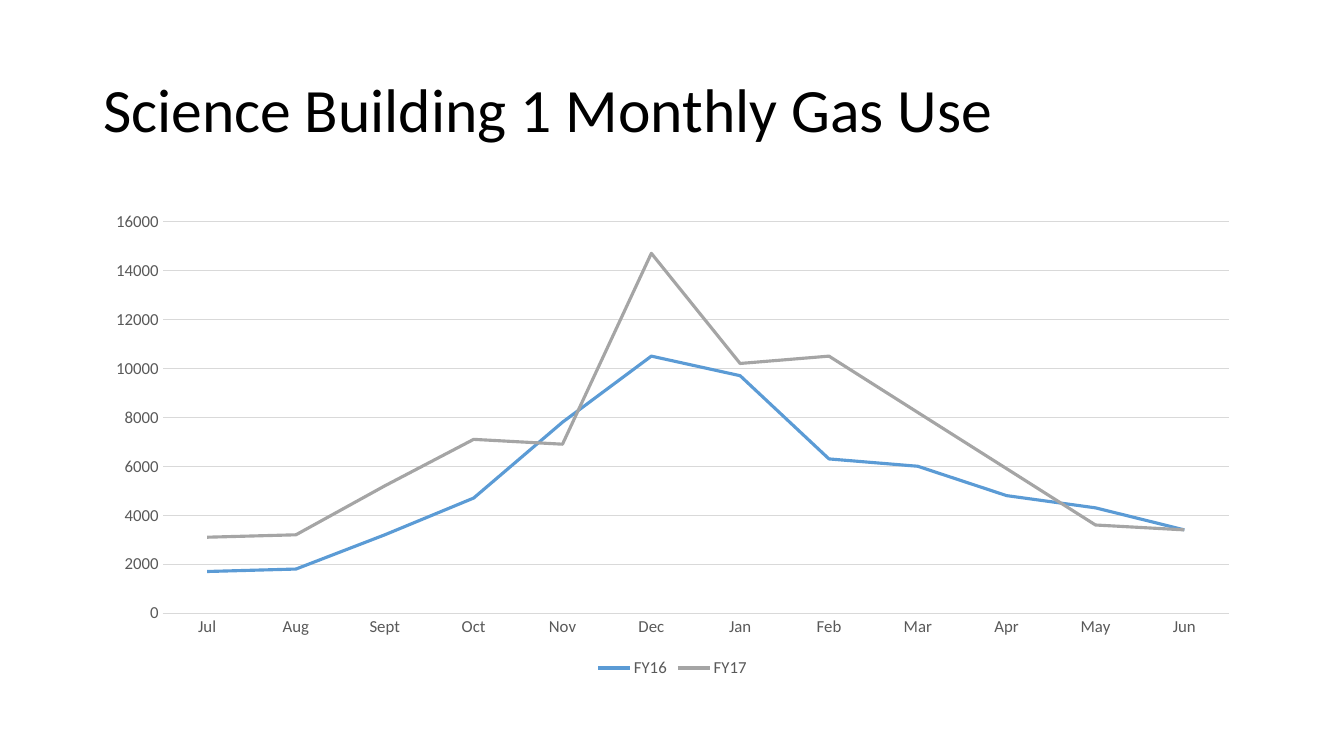
"""Build a slide with a line chart of monthly gas use over two fiscal years."""
import pptx
import pptx.util
import pptx.chart.data
import pptx.dml.color
import pptx.enum.chart
import pptx.enum.text

TITLE = "Science Building 1 Monthly Gas Use"
MONTHS = ["Jul", "Aug", "Sept", "Oct", "Nov", "Dec",
          "Jan", "Feb", "Mar", "Apr", "May", "Jun"]
USAGE = {
    "FY16": [1700, 1800, 3200, 4700, 7800, 10500,
             9700, 6300, 6000, 4800, 4300, 3400],
    "FY17": [3100, 3200, 5200, 7100, 6900, 14700,
             10200, 10500, 8200, 5900, 3600, 3400],
}
COLORS = {"FY16": "5B9BD5", "FY17": "A5A5A5", "title": "000000",
          "label": "595959", "grid": "D9D9D9"}
FONT = "Calibri"
SLIDE = (1344, 756)
TITLE_BOX = (93, 40, 1159, 146)
CHART_BOX = (93, 202, 1159, 480)
SCALE = 914400 / 100.8


def emu(px):
    return pptx.util.Emu(round(px * SCALE))


def color(name):
    return pptx.dml.color.RGBColor.from_string(COLORS[name])


def set_font(font, size, name):
    font.name = FONT
    font.size = pptx.util.Pt(size)
    font.color.rgb = color(name)


def set_line(line, width, name):
    line.color.rgb = color(name)
    line.width = pptx.util.Pt(width)


def add_title(slide):
    title = slide.shapes.title
    title.left, title.top, title.width, title.height = map(emu, TITLE_BOX)
    frame = title.text_frame
    frame.text = TITLE
    frame.word_wrap = True
    frame.vertical_anchor = pptx.enum.text.MSO_ANCHOR.MIDDLE
    para = frame.paragraphs[0]
    para.alignment = pptx.enum.text.PP_ALIGN.LEFT
    para.line_spacing = 0.9
    set_font(para.runs[0].font, 44, "title")


def add_usage(slide):
    data = pptx.chart.data.CategoryChartData()
    data.categories = MONTHS
    for year, values in USAGE.items():
        data.add_series(year, values)
    chart = slide.shapes.add_chart(
        pptx.enum.chart.XL_CHART_TYPE.LINE, *map(emu, CHART_BOX), data).chart
    set_font(chart.font, 12, "label")
    chart.has_title = False
    chart.has_legend = True
    chart.legend.position = pptx.enum.chart.XL_LEGEND_POSITION.BOTTOM
    chart.legend.include_in_layout = False
    set_font(chart.legend.font, 12, "label")

    months, amounts = chart.category_axis, chart.value_axis
    for axis in (months, amounts):
        axis.major_tick_mark = pptx.enum.chart.XL_TICK_MARK.NONE
        axis.minor_tick_mark = pptx.enum.chart.XL_TICK_MARK.NONE
        set_font(axis.tick_labels.font, 12, "label")
    set_line(months.format.line, 0.75, "grid")
    amounts.format.line.fill.background()
    amounts.minimum_scale, amounts.maximum_scale = 0, 16000
    amounts.major_unit = 2000
    amounts.has_major_gridlines = True
    set_line(amounts.major_gridlines.format.line, 0.75, "grid")

    plot = chart.plots[0]
    plot.vary_by_categories = False
    for series in plot.series:
        series.smooth = False
        series.marker.style = pptx.enum.chart.XL_MARKER_STYLE.NONE
        set_line(series.format.line, 2.25, series.name)


def main():
    deck = pptx.Presentation()
    deck.slide_width, deck.slide_height = map(emu, SLIDE)
    slide = deck.slides.add_slide(deck.slide_layouts[5])
    add_title(slide)
    add_usage(slide)
    deck.save("out.pptx")


if __name__ == "__main__":
    main()
